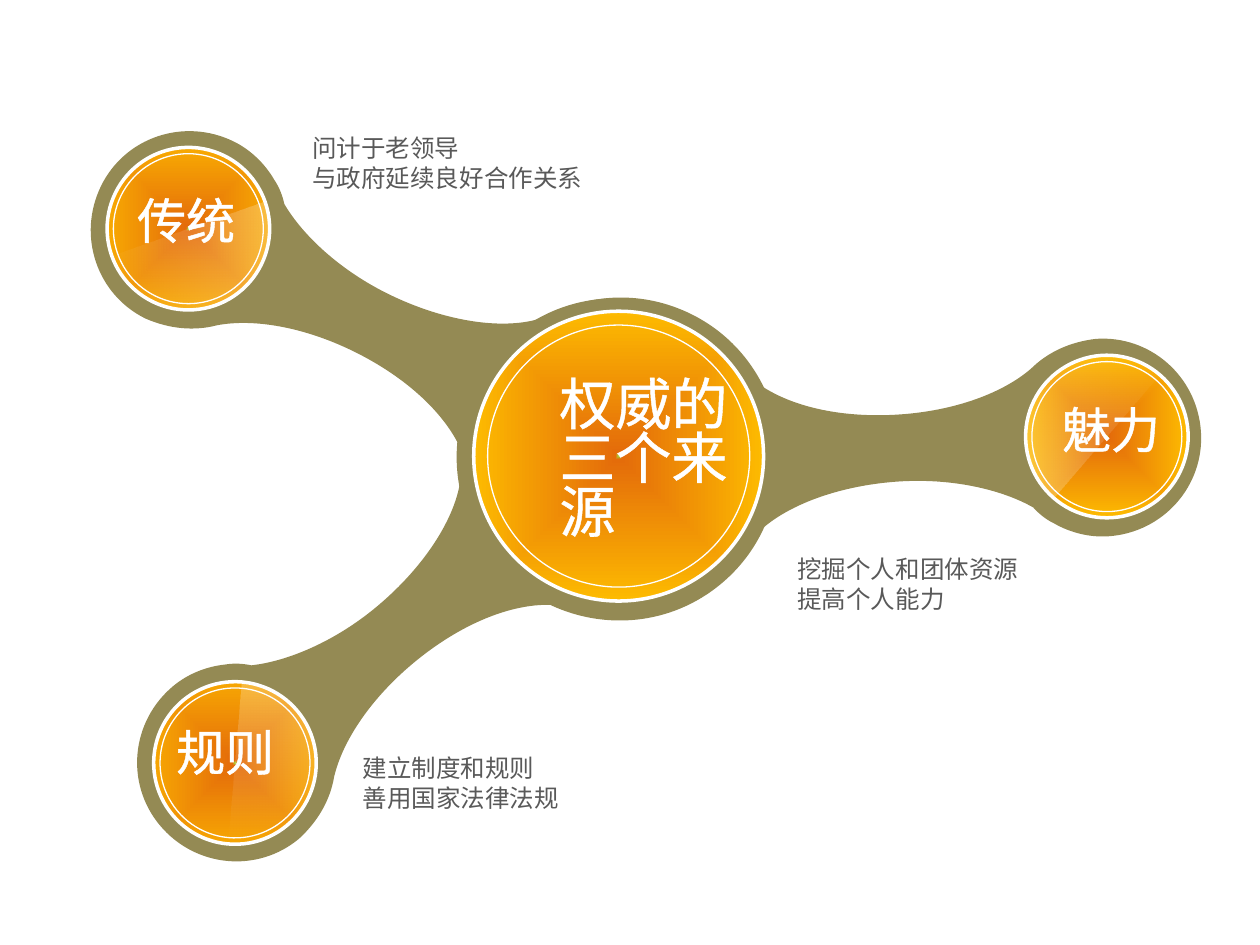
import dataclasses
import math

import pptx
import pptx.dml.color
import pptx.enum.shapes
import pptx.enum.text
import pptx.oxml
import pptx.oxml.ns
import pptx.util

PX = 9144
RGB = pptx.dml.color.RGBColor.from_string
ALIGN = pptx.enum.text.PP_ALIGN
NAMESPACE = pptx.oxml.ns.nsdecls("a")

ARM_CURVES = [
    [(126, 0)],
    [(178, 0), (221, 31), (241, 74)],
    [(265, 95), (306, 108), (354, 108)],
    [(397, 108), (436, 97), (460, 79)],
    [(474, 67), (492, 60), (513, 59)],
    [(556, 59), (591, 94), (591, 138)],
    [(591, 181), (556, 216), (512, 216)],
    [(497, 216), (482, 211), (470, 203)],
    [(463, 199), (458, 194), (454, 189)],
    [(430, 173), (391, 161), (348, 161)],
    [(295, 161), (249, 177), (228, 200)],
    [(205, 232), (168, 252), (126, 252)],
    [(57, 252), (0, 196), (0, 126)],
    [(0, 57), (56, 0), (126, 0)],
]
GLOSS_CURVES = [
    [(0, 64)],
    [(0, 29), (29, 0), (64, 0)],
    [(100, 0), (129, 29), (129, 64)],
]


@dataclasses.dataclass(frozen=True)
class Theme:
    arm: str = "948A54"
    white: str = "FFFFFF"
    note: str = "595959"
    glow: tuple = ((0, "A7D23A", 100), (2, "E46C0A", 100), (100, "FFC000", 100))
    gloss: tuple = ((0, "FFFFFF", 25), (100, "FFFFFF", 0))
    label_font: str = "Arial Narrow"
    note_font: str = "Arial"
    hub_size: int = 32
    node_size: int = 28
    note_size: int = 14
    disc_line: float = 2
    ring_line: float = 0.75
    text_line: float = 1.45


THEME = Theme()


def apply_format(target, values):
    for name, value in values.items():
        setattr(target, name, value)


def emu(*lengths):
    return [round(length * PX) for length in lengths]


def set_gradient(shape, stops, direction, turns):
    stop_xml = ""
    for position, color, opacity in stops:
        alpha = f'<a:alpha val="{opacity * 1000}"/>' if opacity < 100 else ""
        stop_xml += (f'<a:gs pos="{position * 1000}">'
                     f'<a:srgbClr val="{color}">{alpha}</a:srgbClr></a:gs>')
    gradient = pptx.oxml.parse_xml(
        f'<a:gradFill {NAMESPACE} rotWithShape="{turns}">'
        f"<a:gsLst>{stop_xml}</a:gsLst>{direction}</a:gradFill>"
    )
    shape.fill.background()
    empty_fill = shape._element.spPr.find(pptx.oxml.ns.qn("a:noFill"))
    empty_fill.getparent().replace(empty_fill, gradient)


def add_outline(slide, left, top, curves, rotation):
    corners = [tuple(emu(left + x, top + y)) for x, y in (curve[-1] for curve in curves)]
    builder = slide.shapes.build_freeform(*corners[0])
    builder.add_line_segments(corners[1:], close=True)
    shape = builder.convert_to_shape()
    segments = list(shape._element.iter(pptx.oxml.ns.qn("a:lnTo")))
    for segment, curve in zip(segments, curves[1:]):
        points = "".join(f'<a:pt x="{x * PX}" y="{y * PX}"/>' for x, y in curve)
        bezier = pptx.oxml.parse_xml(f"<a:cubicBezTo {NAMESPACE}>{points}</a:cubicBezTo>")
        segment.getparent().replace(segment, bezier)
    shape.rotation = rotation
    shape.shadow.inherit = False
    shape.line.fill.background()
    return shape


def add_circle(slide, left, top, size, rotation, line_width):
    shape = slide.shapes.add_shape(
        pptx.enum.shapes.MSO_SHAPE.OVAL, *emu(left, top, size, size)
    )
    shape.rotation = rotation
    shape.shadow.inherit = False
    shape.fill.background()
    shape.line.color.rgb = RGB(THEME.white)
    shape.line.width = pptx.util.Pt(line_width)
    return shape


def add_disc(slide, left, top, size, inset, rotation):
    disc = add_circle(slide, left, top, size, rotation, THEME.disc_line)
    center = '<a:fillToRect l="50000" t="50000" r="50000" b="50000"/>'
    set_gradient(disc, THEME.glow, f'<a:path path="rect">{center}</a:path>', 0)
    add_circle(slide, left + inset, top + inset, size - 2 * inset, rotation, THEME.ring_line)


def fill_text(shape, lines, font, size, color, paragraph_format):
    frame = shape.text_frame
    apply_format(frame, {
        "word_wrap": True,
        "auto_size": pptx.enum.text.MSO_AUTO_SIZE.SHAPE_TO_FIT_TEXT,
        "vertical_anchor": pptx.enum.text.MSO_ANCHOR.TOP,
        "text": "\n".join(lines),
    })
    for paragraph in frame.paragraphs:
        apply_format(paragraph, paragraph_format)
        for run in paragraph.runs:
            apply_format(run.font, {"name": font, "size": pptx.util.Pt(size)})
            run.font.color.rgb = RGB(color)


def fill_label(shape, text, size):
    paragraph_format = {"alignment": ALIGN.LEFT, "line_spacing": 0.8}
    fill_text(shape, [text], THEME.label_font, size, THEME.white, paragraph_format)
    properties = shape.text_frame.paragraphs[0].runs[0].font._element
    properties.insert(0, pptx.oxml.parse_xml(
        f'<a:ln {NAMESPACE} w="{pptx.util.Pt(THEME.text_line)}">'
        f'<a:solidFill><a:srgbClr val="{THEME.white}"/></a:solidFill></a:ln>'
    ))


def add_arm(slide, left, top, rotation):
    arm = add_outline(slide, left, top, ARM_CURVES, rotation)
    arm.fill.solid()
    arm.fill.fore_color.rgb = RGB(THEME.arm)


def add_node(slide, left, top, rotation, gloss_rotation):
    size = 129
    add_disc(slide, left, top, size, 5, rotation)
    angle = math.radians(gloss_rotation)
    gloss_left = left + size / 4 * math.sin(angle)
    gloss_top = top + size / 4 - size / 4 * math.cos(angle)
    gloss = add_outline(slide, gloss_left, gloss_top, GLOSS_CURVES, gloss_rotation)
    set_gradient(gloss, THEME.gloss, '<a:lin ang="0" scaled="0"/>', 1)


def add_hub(slide, left, top, text):
    add_disc(slide, left, top, 230, 11, 356)
    title = slide.shapes.title
    box = emu(left + 58, top + 51, 166, 139)
    apply_format(title, dict(zip(("left", "top", "width", "height"), box)))
    fill_label(title, text, THEME.hub_size)
    slide.shapes._spTree.append(title._element)


def add_node_label(slide, left, top, text):
    fill_label(slide.shapes.add_textbox(*emu(left, top, 102, 48)), text, THEME.node_size)


def add_note(slide, left, top, lines):
    shape = slide.shapes.add_textbox(*emu(left, top, 305, 57))
    fill_text(shape, lines, THEME.note_font, THEME.note_size, THEME.note,
              {"alignment": ALIGN.JUSTIFY})


SOURCES = [
    {"arm": (66, 349), "node": (122, 541), "rotation": 140.2, "gloss": 94.7,
     "label": (130, 577, "规则"),
     "note": (278, 593, ["建立制度和规则", "善用国家法律法规"])},
    {"arm": (45, 162), "node": (85, 117), "rotation": 206, "gloss": 160.5,
     "label": (99, 155, "传统"),
     "note": (238, 101, ["问计于老领导", "与政府延续良好合作关系"])},
    {"arm": (362, 225), "node": (814, 282), "rotation": 356, "gloss": 310.5,
     "label": (833, 321, "魅力"),
     "note": (623, 435, ["挖掘个人和团体资源", "提高个人能力"])},
]


def main():
    presentation = pptx.Presentation()
    width, height = emu(1000, 750)
    apply_format(presentation, {"slide_width": width, "slide_height": height})
    slide = presentation.slides.add_slide(presentation.slide_layouts[5])
    for source in SOURCES:
        add_arm(slide, *source["arm"], source["rotation"])
        add_node(slide, *source["node"], source["rotation"], source["gloss"])
    add_hub(slide, 376, 247, "权威的三个来源")
    for source in SOURCES:
        add_node_label(slide, *source["label"])
        add_note(slide, *source["note"])
    presentation.save("out.pptx")


if __name__ == "__main__":
    main()
